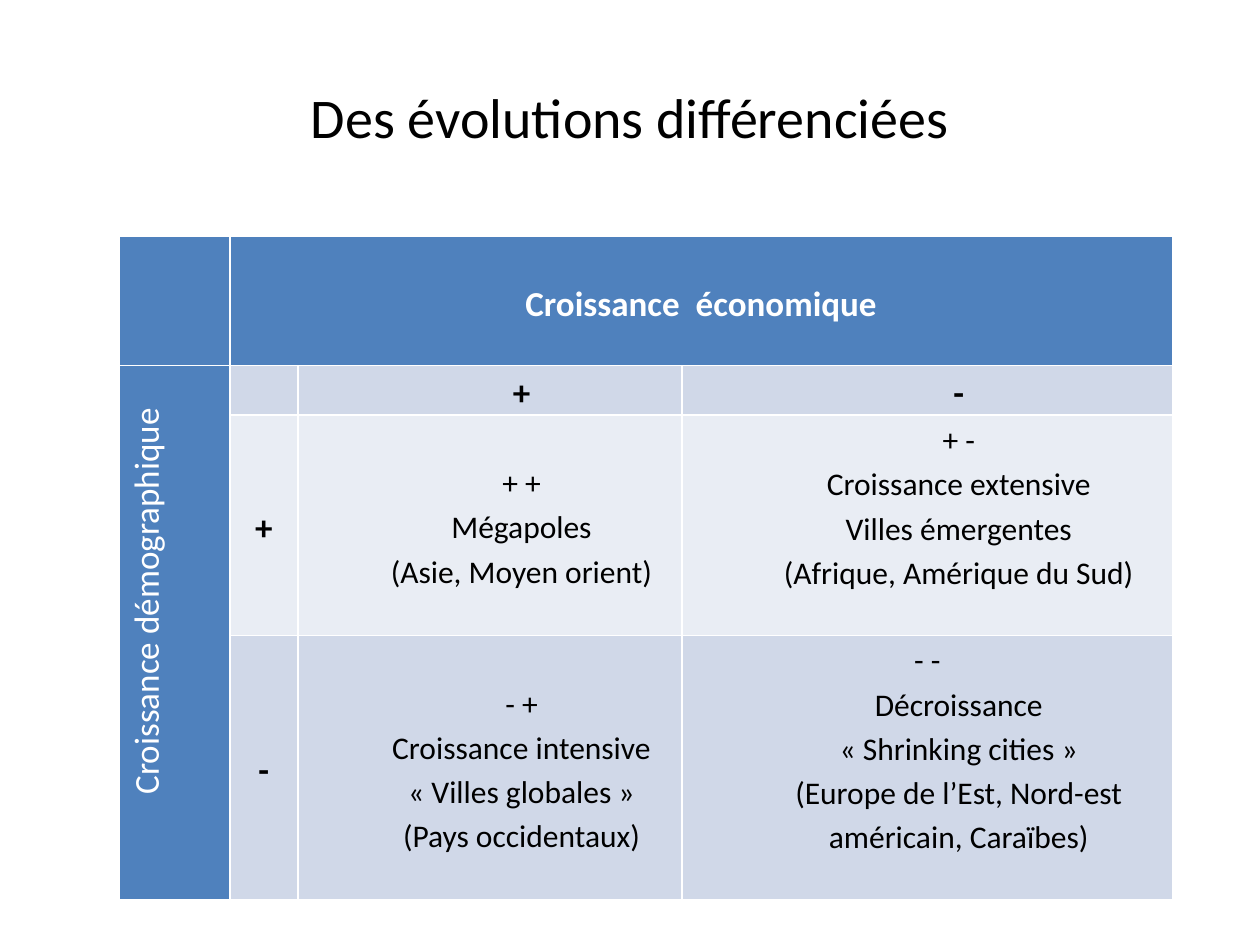
from pptx import Presentation
from pptx.dml.color import RGBColor
from pptx.enum.text import MSO_ANCHOR, PP_ALIGN
from pptx.util import Pt

MID, CENTER = MSO_ANCHOR.MIDDLE, PP_ALIGN.CENTER
FONT, BLACK, WHITE = "Calibri", "000000", "FFFFFF"
BLUE, DARK, LIGHT = "4F81BD", "D0D8E8", "E9EDF4"

# Content
TITLE = "Des évolutions différenciées"
COLS = [63.4, 38.8, 219.7, 280.1]
ROWS = [74, 28, 126, 151]
BANDS = [BLUE, DARK, LIGHT, DARK]
ECO = "Croissance  économique"
DEMO = "Croissance démographique"
# (row, column): sign
SIGNS = {(1, 2): "+", (1, 3): "-", (2, 1): "+", (3, 1): "-"}
# (row, column): lines
CASES = {
    (2, 2): ["+ +", "Mégapoles", "(Asie, Moyen orient)"],
    (2, 3): ["+ -", "Croissance extensive", "Villes émergentes",
             "(Afrique, Amérique du Sud)"],
    (3, 2): ["- +", "Croissance intensive", "« Villes globales »",
             "(Pays occidentaux)"],
    (3, 3): ["- -", "Décroissance", "« Shrinking cities »",
             "(Europe de l’Est, Nord-est américain, Caraïbes)"],
}
INDENT = 36


def color(code):
    return RGBColor.from_string(code)


def style(para, size, code, bold=False):
    para.alignment = CENTER
    font = para.font
    font.name, font.size, font.bold = FONT, Pt(size), bold
    font.color.rgb = color(code)


def write(cell, lines, size, code=BLACK, bold=False, indent=0, gap=0):
    cell.text = "\n".join(lines)
    for para in cell.text_frame.paragraphs:
        style(para, size, code, bold)
        para.line_spacing = 1.15
        para.space_before = para.space_after = Pt(gap)
        set_indent(para, indent)


def set_indent(para, left):
    props = para._p.get_or_add_pPr()
    props.set("marL", str(Pt(left)))
    props.set("indent", "0")


prs = Presentation()
prs.slide_width, prs.slide_height = Pt(720), Pt(540)
slide = prs.slides.add_slide(prs.slide_layouts[5])

# Title
title = slide.shapes.title
title.left, title.top, title.width, title.height = Pt(36), Pt(21.6), Pt(648), Pt(90)
title.text = TITLE
title.text_frame.vertical_anchor = MID
style(title.text_frame.paragraphs[0], 32, BLACK)

# Table grid
table = slide.shapes.add_table(len(ROWS), len(COLS), Pt(68), Pt(135),
                               Pt(sum(COLS)), Pt(sum(ROWS))).table
for col, width in zip(table.columns, COLS):
    col.width = Pt(width)
for r, (row, height) in enumerate(zip(table.rows, ROWS)):
    row.height = Pt(height)
    for c, cell in enumerate(row.cells):
        cell.fill.solid()
        cell.fill.fore_color.rgb = color(BANDS[r] if c else BLUE)
        cell.vertical_anchor = MID
        cell.margin_left = cell.margin_right = Pt(6.5)
        cell.margin_top = cell.margin_bottom = 0

# Axis headings
top, side = table.cell(0, 1), table.cell(1, 0)
top.merge(table.cell(0, 3))
side.merge(table.cell(3, 0))
write(top, [ECO], 20, WHITE, bold=True, gap=6)
write(side, [DEMO], 20, WHITE, indent=INDENT, gap=6)
side._tc.get_or_add_tcPr().set("vert", "vert270")

# Signs and cases
for (r, c), sign in SIGNS.items():
    write(table.cell(r, c), [sign], 20, bold=True, indent=INDENT if c > 1 else 0)
for (r, c), lines in CASES.items():
    cell = table.cell(r, c)
    write(cell, lines, 18, indent=INDENT)
    if c == 3:
        cell.margin_bottom = Pt(24)
set_indent(table.cell(3, 3).text_frame.paragraphs[0], 0)

prs.save("out.pptx")
